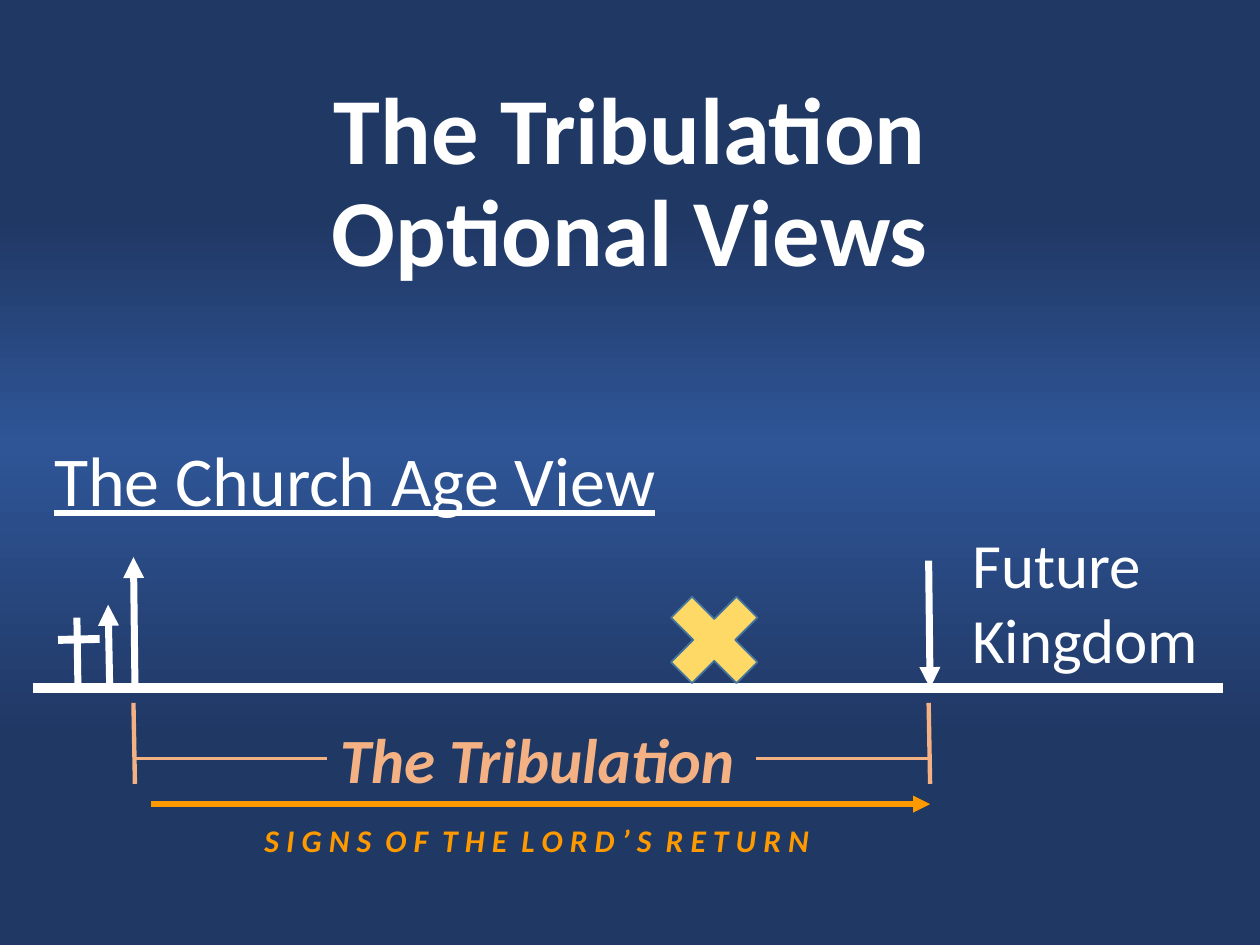
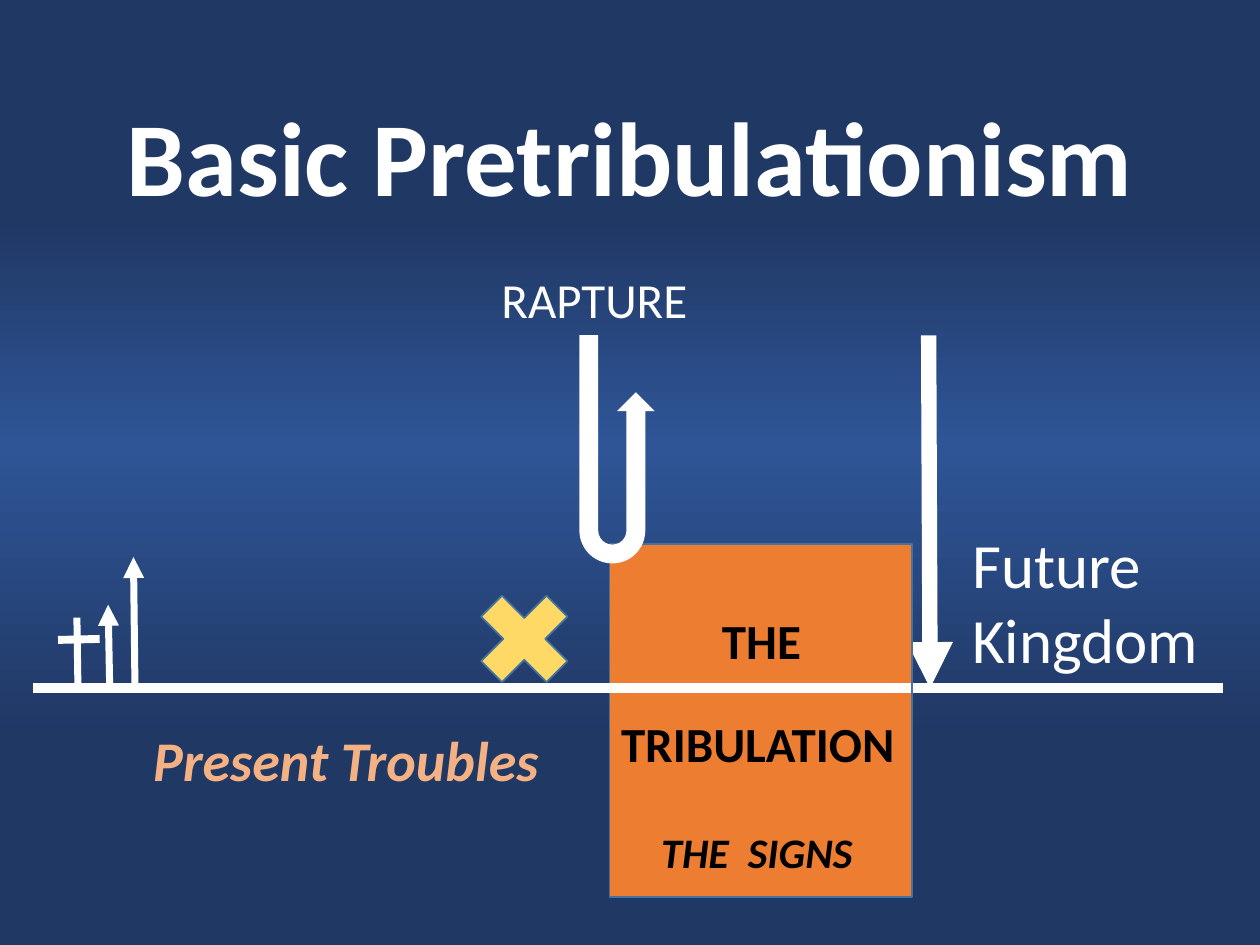
"""Build two slides that compare views of the Tribulation on a timeline."""
from copy import deepcopy

from pptx import Presentation
from pptx.dml.color import RGBColor
from pptx.enum.shapes import MSO_CONNECTOR, MSO_SHAPE
from pptx.enum.text import MSO_ANCHOR, MSO_AUTO_SIZE, PP_ALIGN
from pptx.oxml.ns import qn
from pptx.util import Cm, Pt
from lxml.etree import SubElement

WHITE, BLACK = "FFFFFF", "000000"
NAVY, BLUE, OUTLINE = "203864", "2F5597", "43739E"
PEACH, AMBER, ORANGE, YELLOW = "F4B183", "FF9900", "ED7D31", "FFD966"
FONT = "Calibri"
GROUND = 13.87
CENTER = {"alignment": PP_ALIGN.CENTER}
BOLD = {"bold": True}
SLANTED = {"bold": True, "italic": True}
TITLE_PARA = {"alignment": PP_ALIGN.CENTER, "line_spacing": 0.9}
VIEW_PARA = {"line_spacing": 0.9, "space_before": Pt(10)}


def write_text(box, text, size, color, font_format, para_format):
    frame = box.text_frame
    frame.word_wrap = True
    frame.text = text
    for para in frame.paragraphs:
        for name, value in para_format.items():
            setattr(para, name, value)
        for span in para.runs:
            span.font.color.rgb = RGBColor.from_string(color)
            for name, value in {"name": FONT, "size": Pt(size), **font_format}.items():
                setattr(span.font, name, value)


def draw_line(page, start, end, color, width, arrow=False):
    line = page.shapes.add_connector(
        MSO_CONNECTOR.STRAIGHT, *[Cm(length) for length in (*start, *end)])
    line.line.color.rgb = RGBColor.from_string(color)
    line.line.width = Pt(width)
    if arrow:
        SubElement(line.line._get_or_add_ln(), qn("a:tailEnd"), type="triangle")
    SubElement(line._element.spPr, qn("a:effectLst"))


deck = Presentation()
deck.slide_width, deck.slide_height = Cm(25.4), Cm(19.05)

backdrop = deck.slide_master.background.fill
backdrop.gradient()
backdrop.gradient_angle = 270
first_stop = backdrop.gradient_stops[0]._gs
first_stop.addnext(deepcopy(first_stop))
for stop, (position, color) in zip(
        backdrop.gradient_stops, [(0.23, NAVY), (0.47, BLUE), (0.78, NAVY)]):
    stop.position = position
    stop.color.rgb = RGBColor.from_string(color)

timeline = [
    ((0.66, GROUND), (24.66, GROUND), WHITE, 6),
    ((1.55, 12.45), (1.57, 13.79), WHITE, 4),
    ((1.17, 12.9), (2.01, 12.88), WHITE, 4.5),
    ((2.21, 13.79), (2.18, 12.19), WHITE, 4, True),
    ((2.72, 13.79), (2.69, 11.23), WHITE, 4, True),
]
tribulation_span = [
    ((2.69, 14.17), (2.72, 15.8), PEACH, 2.5),
    ((18.72, 14.17), (18.75, 15.8), PEACH, 2.5),
    ((2.72, 15.29), (6.6, 15.29), PEACH, 1.5),
    ((15.24, 15.29), (18.72, 15.29), PEACH, 1.5),
    ((3.05, 16.21), (18.75, 16.21), AMBER, 3.25, True),
]
future_kingdom = ((19.35, 10.46, 5.49, 3.33), "Future\nKingdom", 36, WHITE, {}, {})

slides = [
    {
        "title": ("The Tribulation\vOptional Views", 54, 4.62),
        "return": (11.3, 4),
        "shapes": [(MSO_SHAPE.MATH_MULTIPLY, (13.13, 11.63, 2.54, 2.54), YELLOW, OUTLINE)],
        "lines": tribulation_span,
        "texts": [
            ((0.84, 8.86, 24, 1.8), "The Church Age View", 40, WHITE,
             {"underline": True}, VIEW_PARA),
            ((6.6, 14.4, 9.45, 1.8), "The Tribulation", 36, PEACH, SLANTED, {}),
            ((5.08, 16.43, 11.63, 1.02), "S I G N S  O F  T H E  L O R D ’ S  R E T U R N",
             18, AMBER, SLANTED, {}),
        ],
    },
    {
        "title": ("Basic Pretribulationism", 60, 3.25),
        "return": (6.76, 8.75),
        "shapes": [
            (MSO_SHAPE.MATH_MULTIPLY, (9.3, 11.61, 2.54, 2.54), YELLOW, OUTLINE),
            (MSO_SHAPE.RECTANGLE, (12.29, 10.97, 6.1, 7.11), ORANGE, OUTLINE),
            (MSO_SHAPE.U_TURN_ARROW, (11.68, 6.76, 1.52, 4.6), WHITE, None),
        ],
        "lines": [((12.27, GROUND), (18.36, GROUND), WHITE, 6)],
        "texts": [
            ((2.84, 14.5, 9.45, 1.63), "Present Troubles", 32, PEACH, SLANTED, {}),
            ((13.51, 12.19, 3.68, 1.45), "THE", 28, BLACK, BOLD, CENTER),
            ((12.27, 14.25, 6.45, 1.45), "TRIBULATION", 28, BLACK, BOLD, {}),
            ((13.08, 16.54, 4.9, 1.27), "THE  SIGNS", 24, BLACK, SLANTED, {}),
            ((9.86, 5.31, 4.62, 1.45), "RAPTURE", 28, WHITE, {}, {}),
        ],
    },
]

for content in slides:
    page = deck.slides.add_slide(deck.slide_layouts[5])
    title = page.shapes.title
    text, size, height = content["title"]
    title.left, title.top, title.width, title.height = Cm(1.9), Cm(1.3), Cm(21.6), Cm(height)
    title.text_frame.vertical_anchor = MSO_ANCHOR.BOTTOM
    title.text_frame.auto_size = MSO_AUTO_SIZE.NONE
    write_text(title, text, size, WHITE, BOLD, TITLE_PARA)

    return_top, return_width = content["return"]
    return_arrow = ((18.72, return_top), (18.75, GROUND), WHITE, return_width, True)
    for line in [*timeline, return_arrow]:
        draw_line(page, *line)

    for kind, place, fill, outline in content["shapes"]:
        shape = page.shapes.add_shape(kind, *[Cm(length) for length in place])
        shape.shadow.inherit = False
        shape.fill.solid()
        shape.fill.fore_color.rgb = RGBColor.from_string(fill)
        if outline:
            shape.line.color.rgb = RGBColor.from_string(outline)
            shape.line.width = Pt(1)
        else:
            shape.line.fill.background()
        if kind == MSO_SHAPE.U_TURN_ARROW:
            shape._element.spPr.xfrm.set("flipV", "1")

    for line in content["lines"]:
        draw_line(page, *line)

    for place, *wording in [future_kingdom, *content["texts"]]:
        box = page.shapes.add_textbox(*[Cm(length) for length in place])
        box.text_frame.auto_size = MSO_AUTO_SIZE.SHAPE_TO_FIT_TEXT
        write_text(box, *wording)

deck.save("out.pptx")
